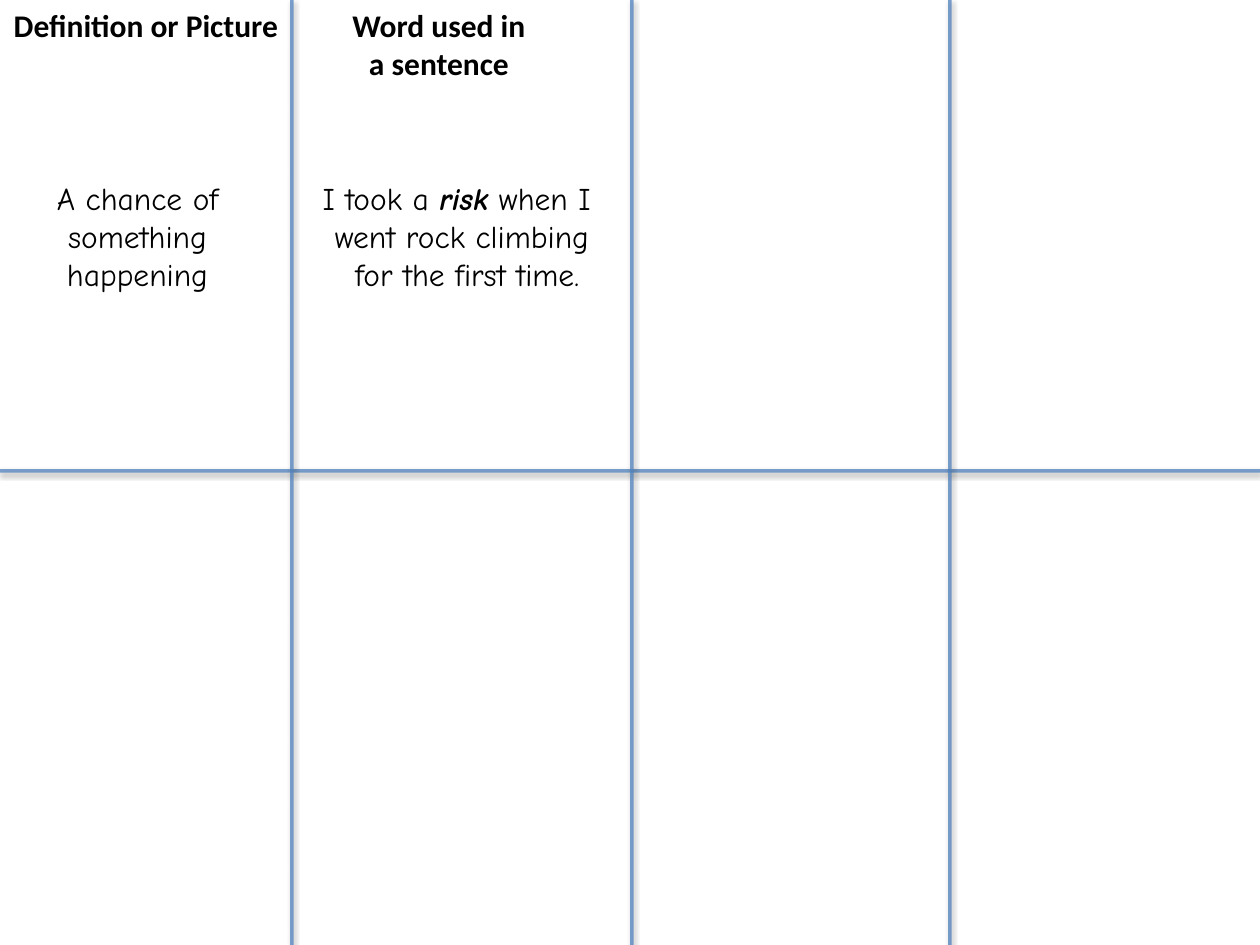
"""Build a vocabulary grid slide with a definition and an example sentence."""
from lxml import etree
from pptx import Presentation
from pptx.dml.color import RGBColor
from pptx.enum.shapes import MSO_CONNECTOR
from pptx.enum.text import MSO_AUTO_SIZE, PP_ALIGN
from pptx.oxml.ns import qn
from pptx.util import Emu, Pt

STRAIGHT = MSO_CONNECTOR.STRAIGHT
CENTER = PP_ALIGN.CENTER
GROW = MSO_AUTO_SIZE.SHAPE_TO_FIT_TEXT
PX = 914400 // 126
WIDTH, HEIGHT = 1260, 945
BLUE, BLACK = "4F81BD", "000000"
HEAD_FONT, BODY_FONT = "Calibri", "Comic Neue"


def px(n):
    return Emu(n * PX)


def rgb(value):
    return RGBColor.from_string(value)


def add_alpha(color, percent):
    etree.SubElement(color, qn("a:alpha"), val=str(percent * 1000))


class VocabularySlide:
    def __init__(self, prs):
        self.s = prs.slides.add_slide(prs.slide_layouts[6])
        self.size = Pt(18)

    def divider(self, x1, y1, x2, y2):
        line = self.s.shapes.add_connector(STRAIGHT, px(x1), px(y1), px(x2), px(y2))
        line.line.width = Pt(2)
        line.line.color.rgb = rgb(BLUE)
        sp_pr = line._element.spPr
        add_alpha(sp_pr.find(".//" + qn("a:srgbClr")), 75)
        effects = etree.SubElement(sp_pr, qn("a:effectLst"))
        shadow = etree.SubElement(
            effects, qn("a:outerShdw"), blurRad=str(Pt(3.1)), dist=str(Pt(1.6)),
            dir="5400000", rotWithShape="0")
        add_alpha(etree.SubElement(shadow, qn("a:srgbClr"), val=BLACK), 38)

    def text(self, x, y, w, h, paragraphs, font, bold=False, wrap=True):
        tf = self.s.shapes.add_textbox(px(x), px(y), px(w), px(h)).text_frame
        tf.word_wrap = wrap
        tf.auto_size = GROW
        for i, runs in enumerate(paragraphs):
            p = tf.add_paragraph() if i else tf.paragraphs[0]
            p.alignment = CENTER
            for words, stressed in runs:
                r = p.add_run()
                r.text = words
                r.font.name = font
                r.font.size = self.size
                r.font.bold = bold or stressed
                r.font.italic = stressed
                r.font.color.rgb = rgb(BLACK)


def main():
    prs = Presentation()
    prs.slide_width, prs.slide_height = px(WIDTH), px(HEIGHT)
    slide = VocabularySlide(prs)

    slide.divider(0, 471, WIDTH, 471)
    for x in (292, 632, 950):
        slide.divider(x, 0, x, HEIGHT)

    slide.text(0, 0, 292, 50, [[("Definition or Picture", False)]], HEAD_FONT, bold=True)
    slide.text(339, 0, 200, 89,
               [[("Word used in ", False)], [("a sentence", False)]],
               HEAD_FONT, bold=True, wrap=False)
    slide.text(29, 173, 217, 165,
               [[("A chance of something happening", False)]], BODY_FONT)
    slide.text(292, 173, 340, 242,
               [[("I took a ", False), ("risk", True), (" when I ", False)],
                [("went rock climbing", False)],
                [(" for the first time.", False)]], BODY_FONT)
    prs.save("out.pptx")


if __name__ == "__main__":
    main()
